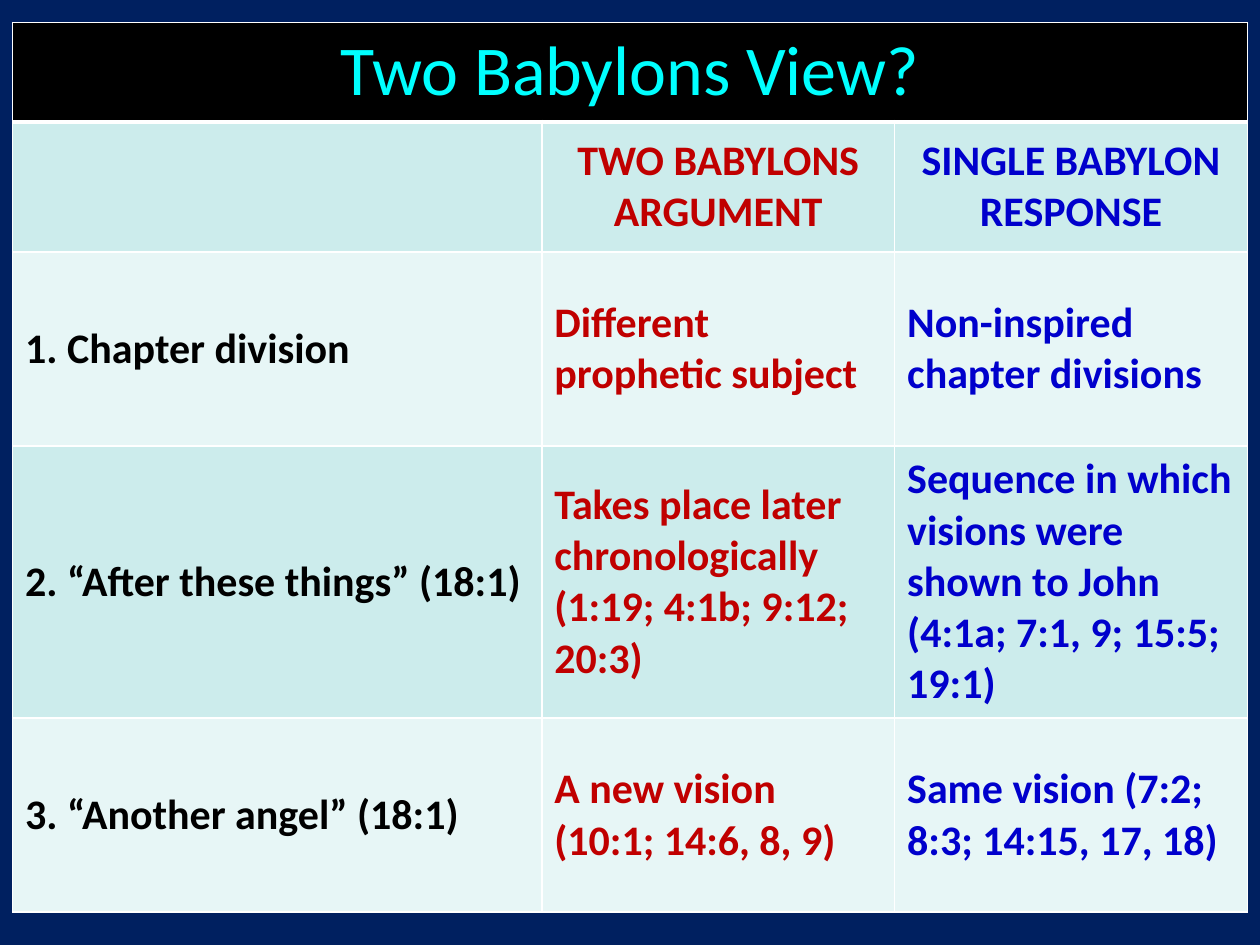
from dataclasses import dataclass

from lxml import etree
from pptx import Presentation
from pptx.dml.color import RGBColor
from pptx.enum.text import MSO_ANCHOR, PP_ALIGN
from pptx.oxml.ns import qn
from pptx.util import Inches, Pt

LEFT, CENTER = PP_ALIGN.LEFT, PP_ALIGN.CENTER
TOP, MIDDLE = MSO_ANCHOR.TOP, MSO_ANCHOR.MIDDLE
BLANK_LAYOUT = 6


@dataclass(frozen=True)
class Theme:
    font: str = "Calibri"
    title_size: int = 40
    body_size: int = 24
    background: str = "002060"
    title_fill: str = "000000"
    title_text: str = "00FFFF"
    row_fills: tuple = ("CCECEC", "E7F6F6")
    column_colors: tuple = ("000000", "C00000", "0000CC")
    border: str = "FFFFFF"
    border_width: int = 1
    title_rule_width: int = 3


THEME = Theme()
TITLE = "Two Babylons View?"
ROWS = (
    ("", "TWO BABYLONS ARGUMENT", "SINGLE BABYLON RESPONSE"),
    ("1. Chapter division", "Different prophetic subject",
     "Non-inspired chapter divisions"),
    ("2. “After these things” (18:1)",
     "Takes place later chronologically (1:19; 4:1b; 9:12; 20:3)",
     "Sequence in which visions were shown to John (4:1a; 7:1, 9; 15:5; 19:1)"),
    ("3. “Another angel” (18:1)", "A new vision (10:1; 14:6, 8, 9)",
     "Same vision (7:2; 8:3; 14:15, 17, 18)"),
)
COLUMN_SHARES = (3, 2, 2)
ROW_HEIGHTS = (0.79, 1.03, 1.54, 2.16, 1.54)


def style_cell(cell, fill, top_width, bottom_width):
    """Give a cell its borders, then its fill, in schema order."""
    properties = cell._tc.get_or_add_tcPr()
    side = THEME.border_width
    widths = {"a:lnL": side, "a:lnR": side, "a:lnT": top_width, "a:lnB": bottom_width}
    for tag, width in widths.items():
        line = etree.SubElement(properties, qn(tag), w=str(Pt(width)))
        solid = etree.SubElement(line, qn("a:solidFill"))
        etree.SubElement(solid, qn("a:srgbClr"), val=THEME.border)
    cell.fill.solid()
    cell.fill.fore_color.rgb = RGBColor.from_string(fill)


def write_cell(cell, text, size, color, bold, alignment, anchor):
    cell.vertical_anchor = anchor
    paragraph = cell.text_frame.paragraphs[0]
    paragraph.alignment = alignment
    if not text:
        return
    run = paragraph.add_run()
    run.text = text
    run.font.name = THEME.font
    run.font.size = Pt(size)
    run.font.bold = bold
    run.font.color.rgb = RGBColor.from_string(color)


def add_title_row(table):
    for cell in table.rows[0].cells:
        style_cell(cell, THEME.title_fill, THEME.border_width, THEME.title_rule_width)
    title_cell = table.cell(0, 0)
    title_cell.merge(table.cell(0, len(COLUMN_SHARES) - 1))
    write_cell(title_cell, TITLE, THEME.title_size, THEME.title_text,
               False, CENTER, TOP)


def add_body_rows(table):
    for row, texts in enumerate(ROWS, start=1):
        heading = row == 1
        fill = THEME.row_fills[(row - 1) % len(THEME.row_fills)]
        top_width = THEME.title_rule_width if heading else THEME.border_width
        for column, text in enumerate(texts):
            cell = table.cell(row, column)
            style_cell(cell, fill, top_width, THEME.border_width)
            write_cell(cell, text, THEME.body_size, THEME.column_colors[column],
                       True, CENTER if heading else LEFT, MIDDLE)


def add_comparison_table(slide, left, top, width, height):
    """Fill the given box with the title row and the argument grid."""
    table = slide.shapes.add_table(len(ROW_HEIGHTS), len(COLUMN_SHARES),
                                   left, top, width, height).table
    for column, share in zip(table.columns, COLUMN_SHARES):
        column.width = int(width * share / sum(COLUMN_SHARES))
    for row, row_height in zip(table.rows, ROW_HEIGHTS):
        row.height = int(height * row_height / sum(ROW_HEIGHTS))
    add_title_row(table)
    add_body_rows(table)


def main():
    presentation = Presentation()
    presentation.slide_width, presentation.slide_height = Inches(10), Inches(7.5)
    slide = presentation.slides.add_slide(presentation.slide_layouts[BLANK_LAYOUT])

    # Background
    slide.background.fill.solid()
    slide.background.fill.fore_color.rgb = RGBColor.from_string(THEME.background)

    # Comparison table, centred with equal side margins
    margin = Inches(0.1)
    add_comparison_table(slide, margin, Inches(0.18),
                         presentation.slide_width - 2 * margin,
                         Inches(sum(ROW_HEIGHTS)))
    presentation.save("out.pptx")


if __name__ == "__main__":
    main()
